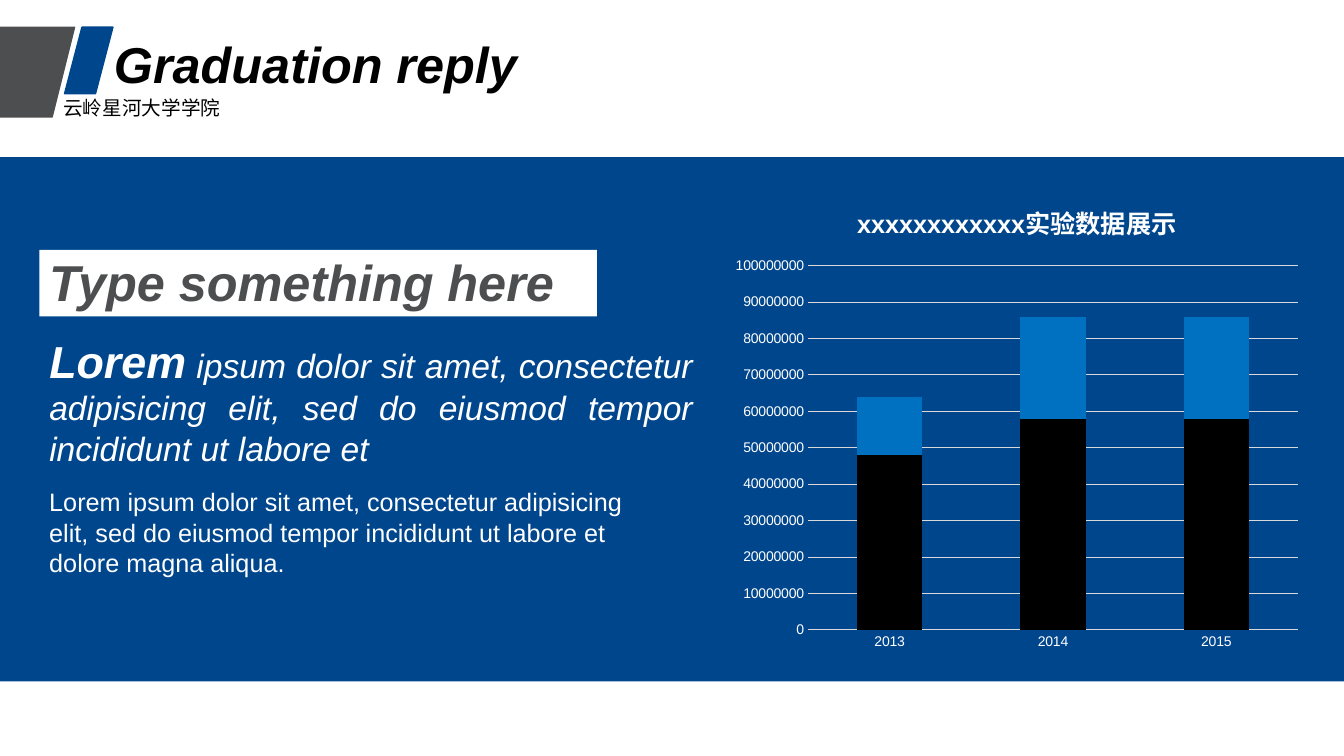
from pptx import Presentation
from pptx.chart.data import CategoryChartData as Data
from pptx.dml.color import RGBColor as RGB
from pptx.enum.chart import XL_CHART_TYPE as Kind, XL_TICK_MARK as Tick
from pptx.enum.shapes import MSO_SHAPE as Form
from pptx.enum.text import MSO_ANCHOR as Anchor, MSO_AUTO_SIZE as Fit, PP_ALIGN as Align
from pptx.util import Emu, Pt

PX = 9144
BLUE = RGB(0x00, 0x46, 0x8D)
SKY = RGB(0x00, 0x70, 0xC0)
GRAY = RGB(0x4D, 0x4E, 0x4F)
PALE = RGB(0xD9, 0xD9, 0xD9)
BLACK = RGB(0, 0, 0)
WHITE = RGB(255, 255, 255)


def place(*sizes):
    """Turn px lengths into EMU."""
    return [Emu(size * PX) for size in sizes]


def style(font, color, **look):
    """Set the face, colour and format values of a font."""
    font.color.rgb = color
    for name, value in {"name": "Arial", **look}.items():
        setattr(font, name, value)


def write(shape, runs, align=Align.LEFT, wrap=True, anchor=Anchor.TOP):
    """Fill a shape with one paragraph of styled runs."""
    frame = shape.text_frame
    look = {"auto_size": Fit.NONE, "word_wrap": wrap, "vertical_anchor": anchor}
    for name, value in look.items():
        setattr(frame, name, value)
    para = frame.paragraphs[0]
    para.alignment = align
    for text, size, color, bold, slant in runs:
        run = para.add_run()
        run.text = text
        style(run.font, color, size=Pt(size), bold=bold, italic=slant)
    return para


def block(slide, form, box, color, edge=False):
    """Draw a flat filled shape."""
    shape = slide.shapes.add_shape(form, *place(*box))
    shape.shadow.inherit = False
    shape.fill.solid()
    shape.fill.fore_color.rgb = color
    if edge:
        shape.line.color.rgb = color
        shape.line.width = Pt(1)
    else:
        shape.line.fill.background()
    return shape


def header(slide, x, y):
    """Place the slanted marks, title and school name."""
    block(slide, Form.PARALLELOGRAM, (x - 40, y, 114, 89), GRAY, True)
    mark = block(slide, Form.PARALLELOGRAM, (x + 64, y, 48, 66), BLUE, True)
    mark.adjustments[0] = 0.36
    title = slide.shapes.title
    title.left, title.top, title.width, title.height = place(x + 103, y + 1, 424, 71)
    write(title, [("Graduation reply", 36, BLACK, True, True)], wrap=False)
    school = slide.shapes.add_textbox(*place(x + 53, y + 63, 177, 34))
    write(school, [("云岭星河大学学院", 14, BLACK, False, False)], wrap=False)


def story(slide, x, y):
    """Place the heading bar and the two texts below it."""
    bar = block(slide, Form.RECTANGLE, (x, y, 553, 66), WHITE)
    para = write(bar, [("Type something here", 36, GRAY, True, True)],
                 Align.JUSTIFY, anchor=Anchor.MIDDLE)
    para.line_spacing = Pt(40)
    lead = slide.shapes.add_textbox(*place(x, y + 78, 658, 145))
    write(lead, [
        ("Lorem", 32, WHITE, True, True),
        (" ipsum dolor sit amet, consectetur adipisicing elit, sed do "
         "eiusmod tempor incididunt ut labore et", 24, WHITE, False, True),
    ], Align.JUSTIFY)
    note = slide.shapes.add_textbox(*place(x, y + 230, 617, 101))
    write(note, [("Lorem ipsum dolor sit amet, consectetur adipisicing elit, sed do "
                  "eiusmod tempor incididunt ut labore et dolore magna aliqua.",
                  18, WHITE, False, False)])


def graph(slide, *box):
    """Place the stacked column chart."""
    data = Data(number_format="0")
    data.categories = ["2013", "2014", "2015"]
    data.add_series("Series 1", [48000000, 58000000, 58000000])
    data.add_series("Series 2", [16000000, 28000000, 28000000])
    chart = slide.shapes.add_chart(Kind.COLUMN_STACKED, *place(*box), data).chart
    style(chart.font, WHITE, size=Pt(10))
    chart.has_legend = False
    head = chart.chart_title
    head.include_in_layout = False
    run = head.text_frame.paragraphs[0].add_run()
    run.text = "xxxxxxxxxxxx实验数据展示"
    style(run.font, WHITE, size=Pt(18), bold=True)

    plot = chart.plots[0]
    for name, value in {"gap_width": 150, "overlap": 100, "vary_by_categories": False}.items():
        setattr(plot, name, value)
    for series, color in zip(plot.series, (BLACK, SKY)):
        series.format.fill.solid()
        series.format.fill.fore_color.rgb = color

    cats, vals = chart.category_axis, chart.value_axis
    for axis in (cats, vals):
        axis.major_tick_mark = axis.minor_tick_mark = Tick.NONE
    scale = {"minimum_scale": 0, "maximum_scale": 100000000, "major_unit": 10000000}
    for name, value in scale.items():
        setattr(vals, name, value)
    vals.format.line.fill.background()
    for line in (cats.format.line, vals.major_gridlines.format.line):
        line.color.rgb = PALE
        line.width = Pt(0.75)


def main():
    """Build and save the slide."""
    deck = Presentation()
    deck.slide_width, deck.slide_height = place(1333, 750)
    slide = deck.slides.add_slide(deck.slide_layouts[5])
    block(slide, Form.RECTANGLE, (0, 156, 1333, 520), BLUE)
    header(slide, 0, 27)
    story(slide, 39, 248)
    graph(slide, 718, 180, 581, 474)
    deck.save("out.pptx")


if __name__ == "__main__":
    main()
